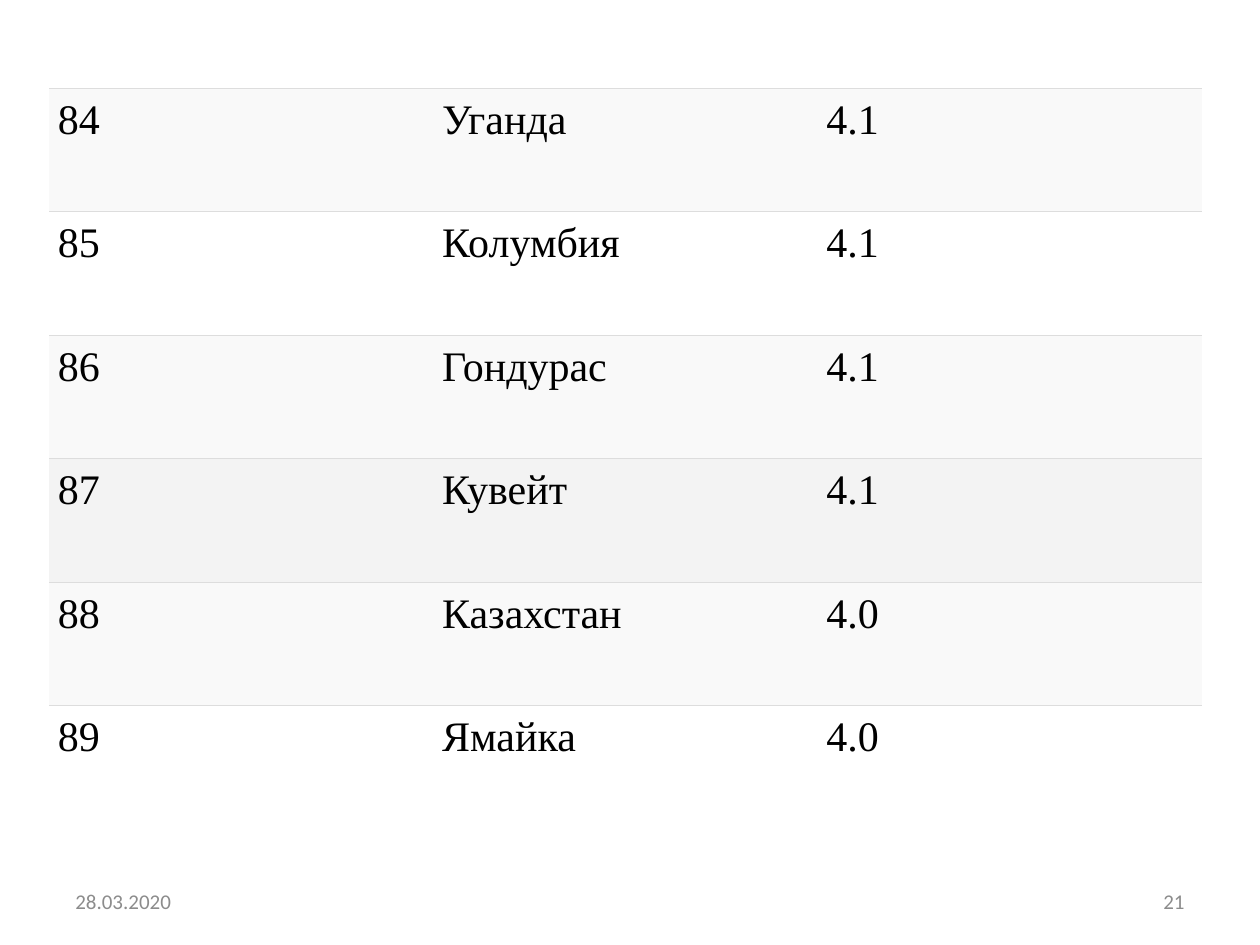
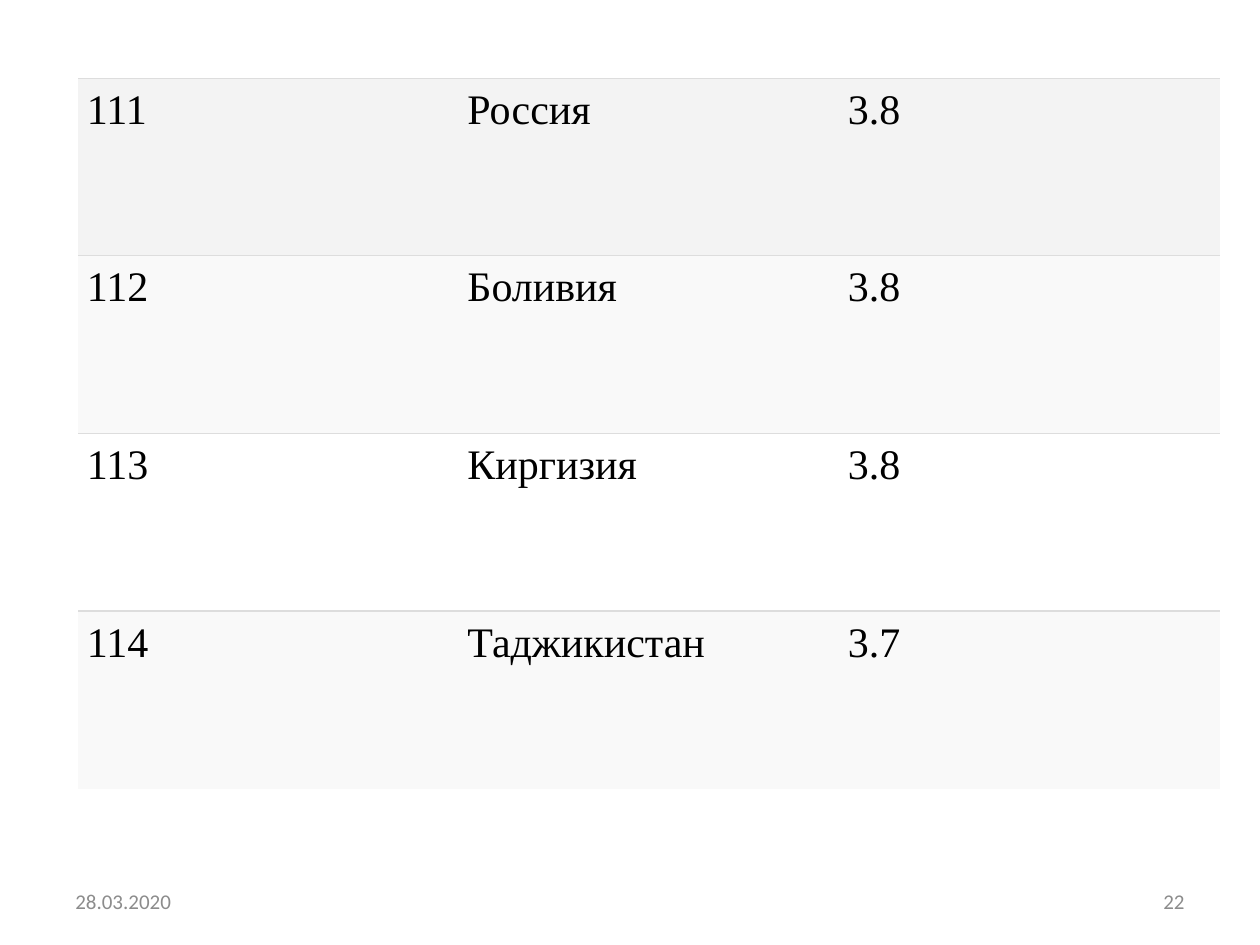
"""Build two slides that continue a ranking table of countries."""

from dataclasses import dataclass

import lxml.etree
import pptx
import pptx.dml.color
import pptx.enum.text
import pptx.oxml.ns
import pptx.presentation
import pptx.slide
import pptx.table
import pptx.text.text
import pptx.util

SLIDE_WIDTH = pptx.util.Inches(10)
SLIDE_HEIGHT = pptx.util.Inches(7.5)
COLUMN_COUNT = 3

WHITE = "FFFFFF"
BLACK = "000000"
STRIPE = "F9F9F9"
HIGHLIGHT = "F3F3F3"
RULE = "DDDDDD"
FOOTER_GREY = "8C8C8C"

TABLE_FONT = "Times New Roman"
FOOTER_FONT = "Calibri"
CELL_MARGIN = pptx.util.Inches(0.07)
RULE_WIDTH = pptx.util.Pt(0.75)

LEFT = pptx.enum.text.PP_ALIGN.LEFT
RIGHT = pptx.enum.text.PP_ALIGN.RIGHT
DATE = "28.03.2020"


@dataclass(frozen=True)
class Country:
    rank: int
    name: str
    score: str
    highlighted: bool = False

    @property
    def fill(self) -> str:
        if self.highlighted:
            return HIGHLIGHT
        return WHITE if self.rank % 2 else STRIPE


@dataclass(frozen=True)
class RankingPage:
    number: int
    left: float
    top: float
    column_width: float
    row_height: float
    countries: tuple[Country, ...]


@dataclass(frozen=True)
class FooterSlot:
    left: float
    alignment: pptx.enum.text.PP_ALIGN


FOOTER_TOP = 6.95 / 7.5
FOOTER_WIDTH = 0.233
FOOTER_HEIGHT = 0.4 / 7.5
DATE_SLOT = FooterSlot(0.05, LEFT)
NUMBER_SLOT = FooterSlot(0.95 - FOOTER_WIDTH, RIGHT)

PAGES = (
    RankingPage(21, 0.39, 0.7, 3.05, 0.98, (
        Country(84, "Уганда", "4.1"),
        Country(85, "Колумбия", "4.1"),
        Country(86, "Гондурас", "4.1"),
        Country(87, "Кувейт", "4.1", highlighted=True),
        Country(88, "Казахстан", "4.0"),
        Country(89, "Ямайка", "4.0"),
    )),
    RankingPage(22, 0.62, 0.62, 3.02, 1.41, (
        Country(111, "Россия", "3.8", highlighted=True),
        Country(112, "Боливия", "3.8"),
        Country(113, "Киргизия", "3.8"),
        Country(114, "Таджикистан", "3.7"),
    )),
)


def color(value: str) -> pptx.dml.color.RGBColor:
    """Turn a hex string into a colour."""
    return pptx.dml.color.RGBColor.from_string(value)


def add_run(paragraph: pptx.text.text._Paragraph, text: str, font: str, size: int, hex_color: str) -> None:
    """Add one formatted run to a paragraph."""
    run = paragraph.add_run()
    run.text = text
    run.font.name = font
    run.font.size = pptx.util.Pt(size)
    run.font.bold = False
    run.font.color.rgb = color(hex_color)


def add_footer(slide: pptx.slide.Slide, slot: FooterSlot, text: str) -> None:
    """Place one footer text in its slot."""
    shape = slide.shapes.add_textbox(
        int(SLIDE_WIDTH * slot.left), int(SLIDE_HEIGHT * FOOTER_TOP),
        int(SLIDE_WIDTH * FOOTER_WIDTH), int(SLIDE_HEIGHT * FOOTER_HEIGHT))
    frame = shape.text_frame
    frame.word_wrap = True
    frame.vertical_anchor = pptx.enum.text.MSO_ANCHOR.MIDDLE
    paragraph = frame.paragraphs[0]
    paragraph.alignment = slot.alignment
    add_run(paragraph, text, FOOTER_FONT, 12, FOOTER_GREY)


def set_borders(cell: pptx.table._Cell, ruled_sides: str) -> None:
    """Rule the named sides of a cell and clear the others."""
    properties = cell._tc.get_or_add_tcPr()
    qualified = pptx.oxml.ns.qn
    for side in "LRTB":
        line = lxml.etree.SubElement(properties, qualified(f"a:ln{side}"), w=str(RULE_WIDTH))
        if side in ruled_sides:
            fill = lxml.etree.SubElement(line, qualified("a:solidFill"))
            lxml.etree.SubElement(fill, qualified("a:srgbClr"), val=RULE)
        else:
            lxml.etree.SubElement(line, qualified("a:noFill"))


def fill_cell(cell: pptx.table._Cell, text: str, hex_fill: str, ruled_sides: str) -> None:
    """Write and style one table cell."""
    cell.margin_left = cell.margin_right = CELL_MARGIN
    cell.margin_top = cell.margin_bottom = CELL_MARGIN
    set_borders(cell, ruled_sides)
    cell.fill.solid()
    cell.fill.fore_color.rgb = color(hex_fill)
    add_run(cell.text_frame.paragraphs[0], text, TABLE_FONT, 24, BLACK)


def add_ranking(slide: pptx.slide.Slide, page: RankingPage) -> None:
    """Add the ranking table of a page."""
    row_count = len(page.countries)
    table = slide.shapes.add_table(
        row_count, COLUMN_COUNT,
        pptx.util.Inches(page.left), pptx.util.Inches(page.top),
        pptx.util.Inches(page.column_width * COLUMN_COUNT),
        pptx.util.Inches(page.row_height * row_count)).table
    table.first_row = False
    table.horz_banding = False
    for row_index, country in enumerate(page.countries):
        ruled_sides = "T" if row_index == row_count - 1 else "TB"
        texts = (str(country.rank), country.name, country.score)
        for column_index, text in enumerate(texts):
            fill_cell(table.cell(row_index, column_index), text, country.fill, ruled_sides)


def add_page(presentation: pptx.presentation.Presentation, page: RankingPage) -> None:
    """Add one slide with its footers and table."""
    slide = presentation.slides.add_slide(presentation.slide_layouts[6])
    slide.background.fill.solid()
    slide.background.fill.fore_color.rgb = color(WHITE)
    add_footer(slide, DATE_SLOT, DATE)
    add_footer(slide, NUMBER_SLOT, str(page.number))
    add_ranking(slide, page)


def main() -> None:
    """Build and save the presentation."""
    presentation = pptx.Presentation()
    presentation.slide_width = SLIDE_WIDTH
    presentation.slide_height = SLIDE_HEIGHT
    for page in PAGES:
        add_page(presentation, page)
    presentation.save("out.pptx")


if __name__ == "__main__":
    main()
